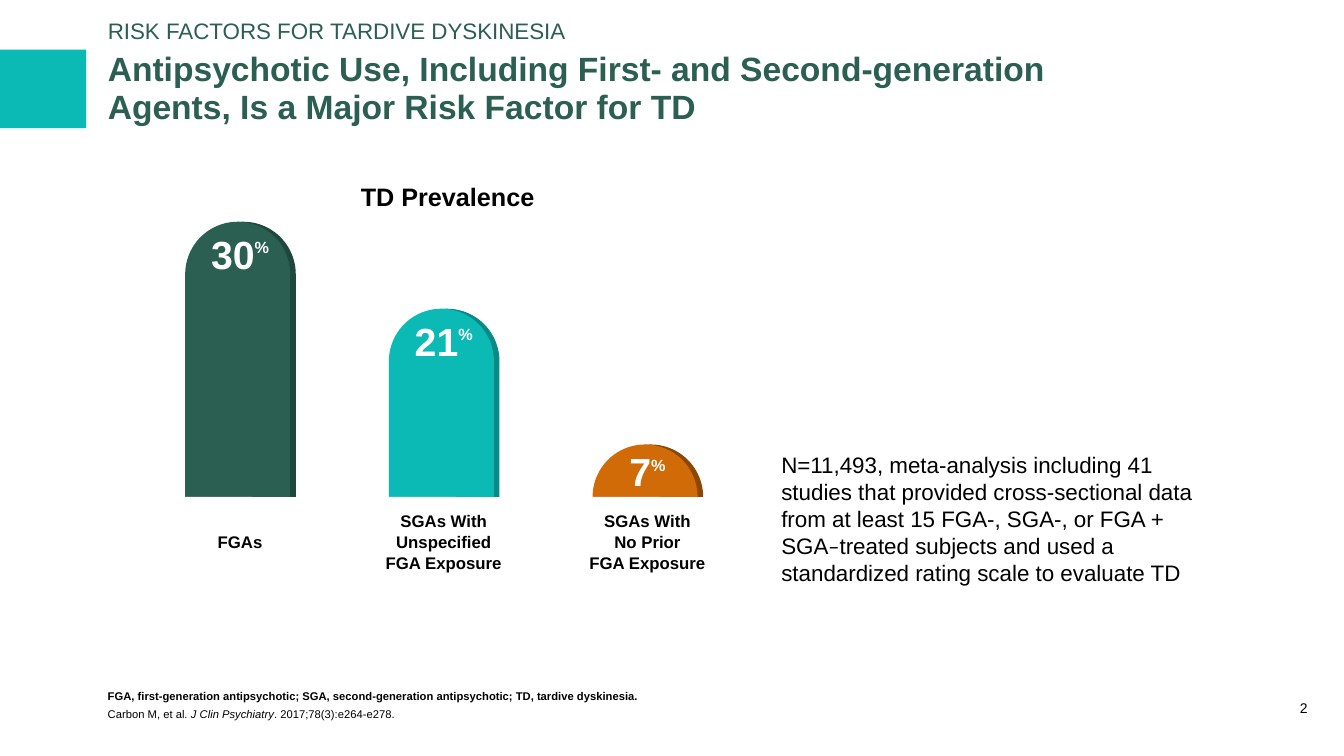
from pptx import Presentation
from pptx.dml.color import RGBColor
from pptx.enum.shapes import MSO_SHAPE
from pptx.enum.text import MSO_ANCHOR, MSO_AUTO_SIZE, PP_ALIGN
from pptx.oxml import parse_xml
from pptx.oxml.ns import nsdecls
from pptx.util import Pt

COLORS = {
    "black": "000000", "white": "FFFFFF",
    "green": "2B5F51", "green_shade": "20473D",
    "teal": "0BBAB4", "teal_shade": "088B87",
    "orange": "D06B08", "orange_shade": "8A4705",
}
PLAIN_FRAME = {
    "margin_left": 0, "margin_right": 0, "margin_top": 0, "margin_bottom": 0,
    "word_wrap": True, "auto_size": MSO_AUTO_SIZE.NONE,
    "vertical_anchor": MSO_ANCHOR.MIDDLE,
}
INSET_FRAME = {"word_wrap": True, "vertical_anchor": MSO_ANCHOR.TOP}
BARS = [
    ("30", "FGAs", "green", 158.4, 208, 6),
    ("21", "SGAs With\nUnspecified\nFGA Exposure", "teal", 220.5, 145.5, 6),
    ("7", "SGAs With\nNo Prior\nFGA Exposure", "orange", 317.5, 75, 2),
]


def apply_format(target, values):
    """Set every attribute named in values on the target."""
    for name, value in values.items():
        setattr(target, name, value)


def place(shape, box):
    """Move and size a shape to a box given in points."""
    names = ("left", "top", "width", "height")
    apply_format(shape, dict(zip(names, map(Pt, box))))


def write_run(paragraph, text, size, color="black", **font_values):
    """Add one formatted run, with a line break at each newline."""
    for index, line in enumerate(text.split("\n")):
        if index:
            paragraph.add_line_break()
        run = paragraph.add_run()
        run.text = line
        apply_format(run.font, {"name": "Arial", "size": Pt(size), **font_values})
        run.font.color.rgb = RGBColor.from_string(COLORS[color])
    return run


def add_text_box(shapes, box, frame_values):
    """Add an empty text box and return its text frame."""
    text_box = shapes.add_textbox(*map(Pt, box))
    apply_format(text_box.text_frame, frame_values)
    return text_box.text_frame


def add_block(shapes, kind, box, color):
    """Add a flat filled shape without outline or shadow."""
    shape = shapes.add_shape(kind, *map(Pt, box))
    shape.fill.solid()
    shape.fill.fore_color.rgb = RGBColor.from_string(COLORS[color])
    shape.line.fill.background()
    shape.shadow.inherit = False
    return shape


def add_heading(slide, box):
    """Fill the title and the small line over it, with the side block."""
    left, top, width, height = box
    add_block(slide.shapes, MSO_SHAPE.RECTANGLE, (0, top + 22.5, 61.5, 56), "teal")

    title = slide.shapes.title
    place(title, (left, top + 15, width, height - 15))
    apply_format(title.text_frame, PLAIN_FRAME)
    paragraph = title.text_frame.paragraphs[0]
    apply_format(paragraph, {"alignment": PP_ALIGN.LEFT, "line_spacing": 0.95})
    write_run(paragraph, "Antipsychotic Use, Including First- and Second-generation "
              "Agents, Is a Major Risk Factor for TD", 24, "green", bold=True)

    topic = slide.placeholders[1]
    place(topic, (left, top, width, 20))
    apply_format(topic.text_frame, PLAIN_FRAME)
    paragraph = topic.text_frame.paragraphs[0]
    properties = paragraph._p.get_or_add_pPr()
    properties.set("marL", "0")
    properties.set("indent", "0")
    properties.append(parse_xml(f"<a:buNone {nsdecls('a')}/>"))
    apply_format(paragraph, {"line_spacing": 0.95, "space_before": Pt(0)})
    write_run(paragraph, "RISK FACTORS FOR TARDIVE DYSKINESIA", 16, "green")


def add_bar(slide, box, bar):
    """Draw one rounded bar with its shade, value and label as a group."""
    value, label, color, bar_top, bar_height, value_gap = bar
    left, top, width, height = box
    bar_left, bar_width = left + 14.8, 75
    shapes = slide.shapes.add_group_shape().shapes
    for offset, fill in ((4, color + "_shade"), (0, color)):
        bar_box = (bar_left + offset, bar_top, bar_width, bar_height)
        shape = add_block(shapes, MSO_SHAPE.ROUND_2_SAME_RECTANGLE, bar_box, fill)
        shape.adjustments[0] = 0.5

    frame = add_text_box(shapes, (bar_left + 14, bar_top + value_gap, 50.4, 34),
                         {**PLAIN_FRAME, "word_wrap": False})
    paragraph = frame.paragraphs[0]
    paragraph.alignment = PP_ALIGN.CENTER
    write_run(paragraph, value, 28, "white", bold=True)
    percent = write_run(paragraph, "%", 20, "white", bold=True)
    percent._r.get_or_add_rPr().set("baseline", "56000")

    shape = add_block(shapes, MSO_SHAPE.ROUNDED_RECTANGLE, box, "white")
    shape.adjustments[0] = 0.21
    apply_format(shape.text_frame, {**PLAIN_FRAME, "word_wrap": False})
    paragraph = shape.text_frame.paragraphs[0]
    apply_format(paragraph, {"alignment": PP_ALIGN.CENTER, "line_spacing": Pt(15)})
    write_run(paragraph, label, 12, bold=True)


def add_prevalence(slide, box):
    """Draw the prevalence heading and its evenly spaced bars."""
    left, top, width, height = box
    frame = add_text_box(slide.shapes, (left, top, width, 29), INSET_FRAME)
    paragraph = frame.paragraphs[0]
    paragraph.alignment = PP_ALIGN.CENTER
    write_run(paragraph, "TD Prevalence", 18, bold=True)
    label_height, pitch = 63.4, 145.5
    for index, bar in enumerate(BARS):
        label_box = (left + 17 + index * pitch, top + height - label_height,
                     108, label_height)
        add_bar(slide, label_box, bar)


def add_study_note(slide, box):
    """Write the description of the meta-analysis."""
    paragraph = add_text_box(slide.shapes, box, INSET_FRAME).paragraphs[0]
    write_run(paragraph, "N=11,493, meta-analysis including 41 studies that provided "
              "cross-sectional data from at least 15 FGA-, SGA-, or FGA + SGA", 16)
    write_run(paragraph, "–", 16, name="Calibri")
    write_run(paragraph, "treated subjects and used a standardized rating scale "
              "to evaluate TD", 16)


def add_footer(slide, box):
    """Write the abbreviations, the reference and the slide number."""
    left, top, width, height = box
    bottom_frame = {**PLAIN_FRAME, "vertical_anchor": MSO_ANCHOR.BOTTOM}
    frame = add_text_box(slide.shapes, box, bottom_frame)
    abbreviations, reference = frame.paragraphs[0], frame.add_paragraph()
    for paragraph in (abbreviations, reference):
        paragraph.space_after = Pt(3)
    write_run(abbreviations, "FGA, first-generation antipsychotic; SGA, second-generation "
              "antipsychotic; TD, tardive dyskinesia.", 8, bold=True)
    write_run(reference, "Carbon M, et al. ", 8)
    write_run(reference, "J Clin Psychiatry", 8, italic=True)
    write_run(reference, ". 2017;78(3):e264-e278.", 8)

    number_box = (left + width + 10, top - 1.4, 24, 31)
    paragraph = add_text_box(slide.shapes, number_box, bottom_frame).paragraphs[0]
    apply_format(paragraph, {"alignment": PP_ALIGN.CENTER, "line_spacing": 0.95})
    write_run(paragraph, "2", 10)


def main():
    """Build the slide and save it."""
    presentation = Presentation()
    apply_format(presentation, {"slide_width": Pt(960), "slide_height": Pt(540)})
    slide = presentation.slides.add_slide(presentation.slide_layouts[1])
    add_heading(slide, (77, 13, 710, 86))
    add_prevalence(slide, (100.5, 126, 438.5, 292.4))
    add_study_note(slide, (551, 319, 322.5, 104.4))
    add_footer(slide, (77, 482.4, 832.3, 32.4))
    presentation.save("out.pptx")


if __name__ == "__main__":
    main()
